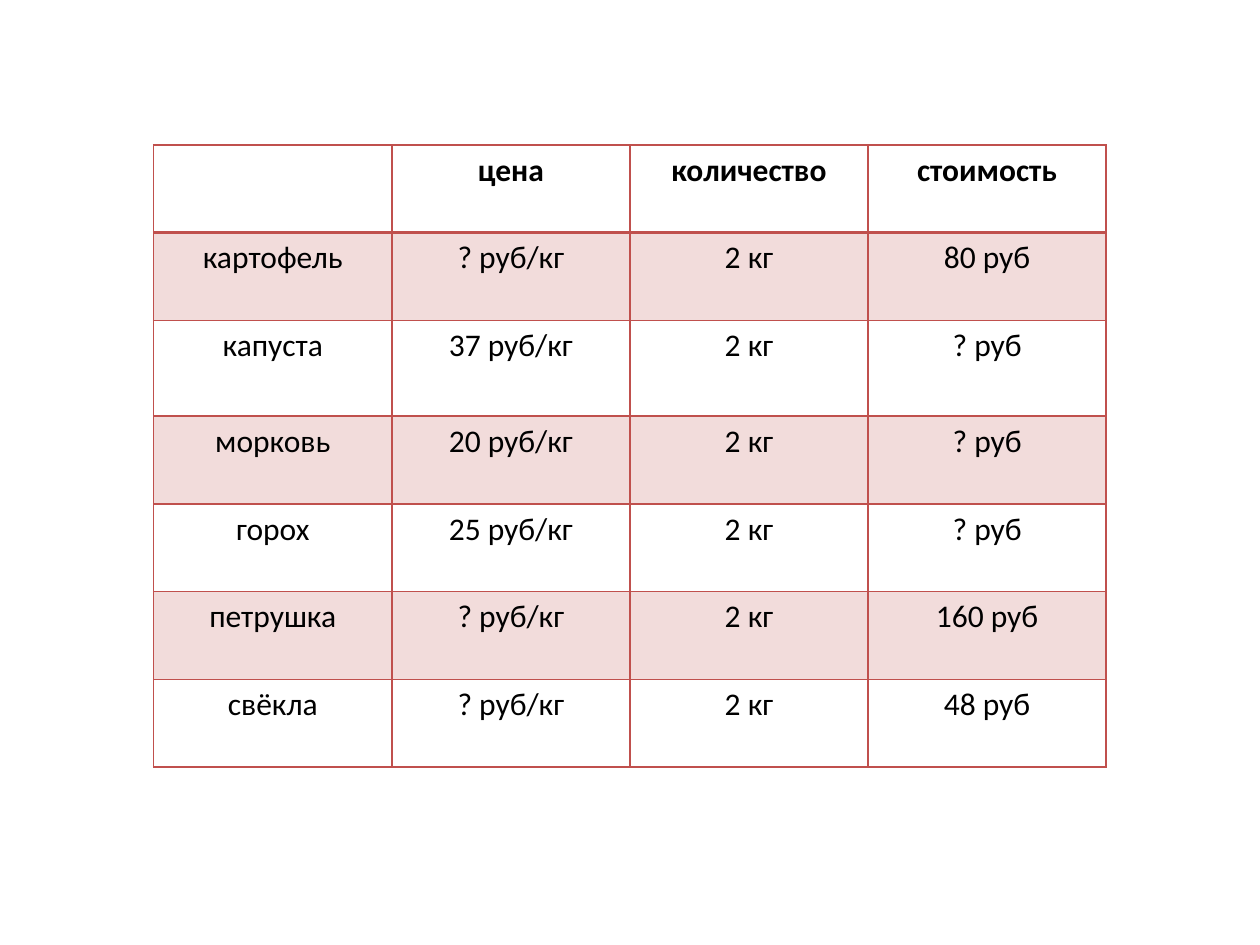
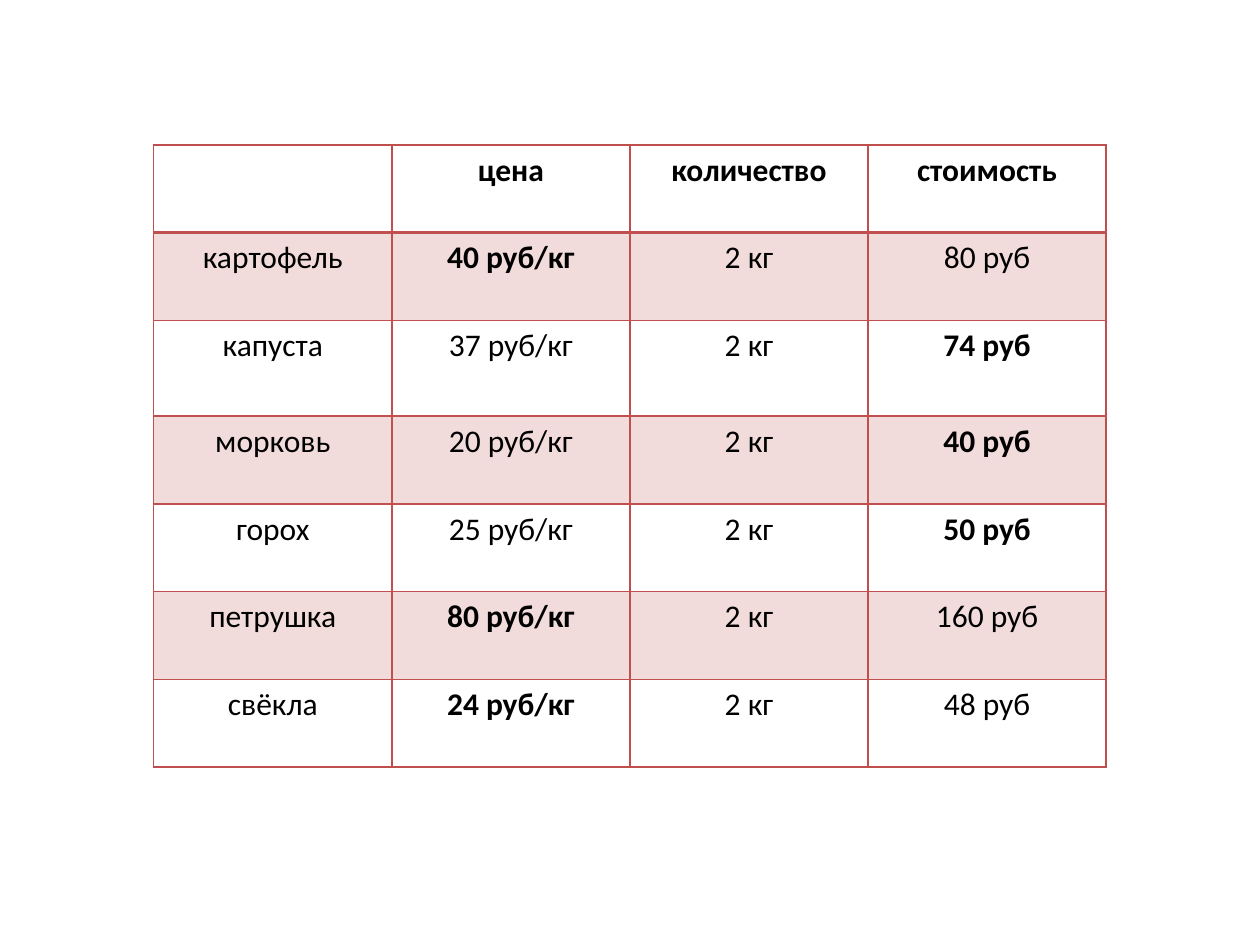
import pptx
import pptx.dml.color
import pptx.enum.text
import pptx.oxml
import pptx.oxml.ns
import pptx.util

RED = pptx.dml.color.RGBColor(0xC0, 0x50, 0x4D)
BLACK = pptx.dml.color.RGBColor(0, 0, 0)
FONT = "Calibri"
FONT_SIZE = pptx.util.Pt(18)
BAND_OPACITY = 20  # per cent

# Slide and grid, in inches
SLIDE_WIDTH, SLIDE_HEIGHT = 10, 7.5
LEFT, TOP = 1.22, 1.15
GRID_WIDTH, GRID_HEIGHT = SLIDE_WIDTH - 2 * LEFT, 4.94
TALL_ROW, TALL_HEIGHT = 2, 0.76

HEADINGS = ["", "цена", "количество", "стоимость"]
KILOS = 2
# Vegetable, price per kilo, and which of the two values is to be found
VEGETABLES = [
    ("картофель", 40, "цена"),
    ("капуста", 37, "стоимость"),
    ("морковь", 20, "стоимость"),
    ("горох", 25, "стоимость"),
    ("петрушка", 80, "цена"),
    ("свёкла", 24, "цена"),
]


def set_border(cell, side, points):
    """Draw one side (L, R, T or B) of a cell."""
    cell._tc.get_or_add_tcPr().append(pptx.oxml.parse_xml(
        f'<a:ln{side} {pptx.oxml.ns.nsdecls("a")} w="{pptx.util.Pt(points)}">'
        f'<a:solidFill><a:srgbClr val="{RED}"/></a:solidFill></a:ln{side}>'))


def set_fill(cell, banded):
    """Tint a banded cell with translucent red, leave the others clear."""
    if not banded:
        cell.fill.background()
        return
    cell.fill.solid()
    cell.fill.fore_color.rgb = RED
    color = cell._tc.tcPr.find(".//" + pptx.oxml.ns.qn("a:solidFill") + "[last()]/..")
    tint = cell._tc.tcPr.find(pptx.oxml.ns.qn("a:solidFill"))[0] if color is not None else None
    if tint is not None:
        alpha = tint.makeelement(pptx.oxml.ns.qn("a:alpha"), {"val": str(BAND_OPACITY * 1000)})
        tint.append(alpha)


def write_cell(cell, text, bold):
    paragraph = cell.text_frame.paragraphs[0]
    paragraph.text = text
    paragraph.alignment = pptx.enum.text.PP_ALIGN.CENTER
    for run in paragraph.runs:
        run.font.name = FONT
        run.font.size = FONT_SIZE
        run.font.bold = bold
        run.font.color.rgb = BLACK


def price_rows(solved):
    """Rows of (text, bold); solved values are bold, unsolved ones a question mark."""
    rows = [[(heading, True) for heading in HEADINGS]]
    for vegetable, price, unknown in VEGETABLES:
        def value(heading, number, unit):
            asked = heading == unknown
            shown = "?" if asked and not solved else number
            return f"{shown} {unit}", asked and solved

        rows.append([(vegetable, False), value("цена", price, "руб/кг"),
                     (f"{KILOS} кг", False),
                     value("стоимость", price * KILOS, "руб")])
    return rows


def add_price_table(slide, rows):
    table = slide.shapes.add_table(
        len(rows), len(HEADINGS),
        *map(pptx.util.Inches, (LEFT, TOP, GRID_WIDTH, GRID_HEIGHT))).table
    table.first_row = table.horz_banding = False
    row_height = (GRID_HEIGHT - TALL_HEIGHT) / (len(rows) - 1)
    for r, row in enumerate(rows):
        table.rows[r].height = pptx.util.Inches(TALL_HEIGHT if r == TALL_ROW else row_height)
        for c, (text, bold) in enumerate(row):
            cell = table.cell(r, c)
            write_cell(cell, text, bold)
            # The rule under the headings is twice as thick
            for side, points in (("L", 1), ("R", 1), ("T", 2 if r == 1 else 1),
                                 ("B", 2 if r == 0 else 1)):
                set_border(cell, side, points)
            set_fill(cell, banded=r % 2 == 1)


def main():
    deck = pptx.Presentation()
    deck.slide_width = pptx.util.Inches(SLIDE_WIDTH)
    deck.slide_height = pptx.util.Inches(SLIDE_HEIGHT)
    # The task first, then its answers
    for solved in (False, True):
        slide = deck.slides.add_slide(deck.slide_layouts[6])
        add_price_table(slide, price_rows(solved))
    deck.save("out.pptx")


if __name__ == "__main__":
    main()
